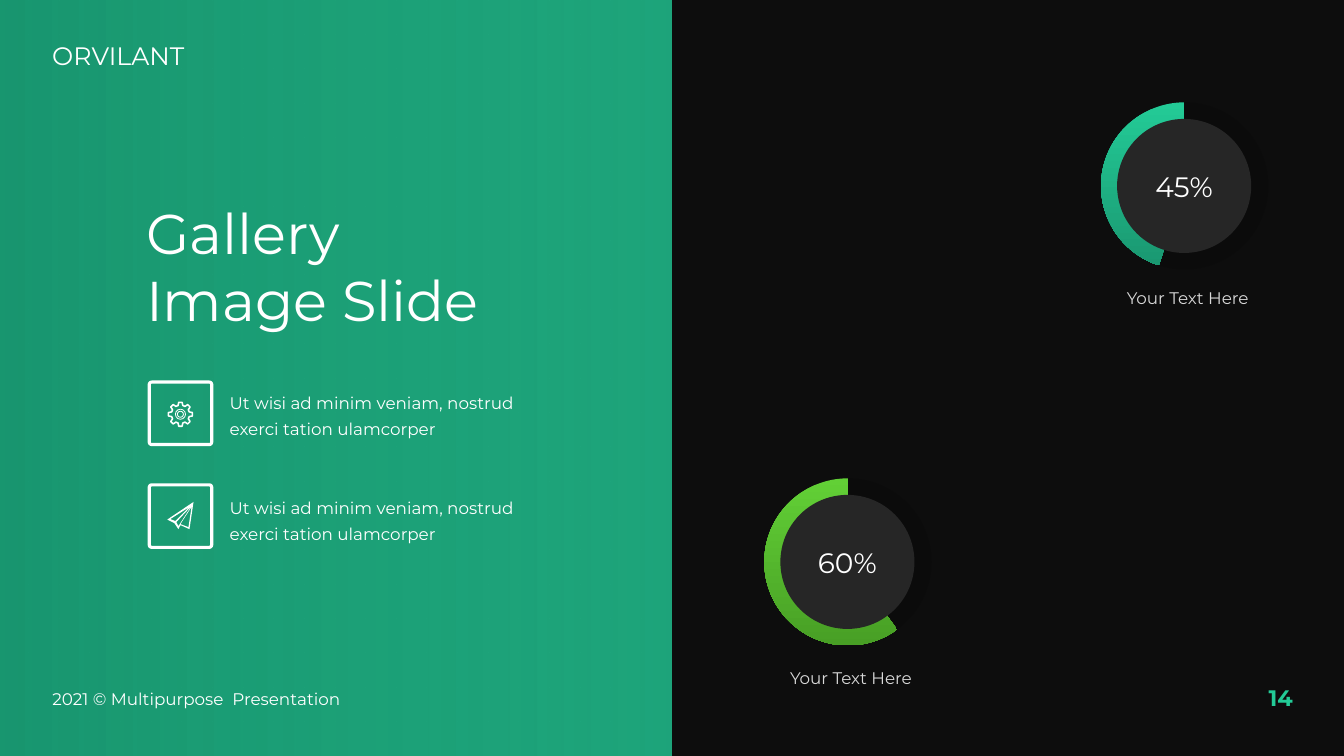
from math import cos, radians, sin

from lxml import etree
from pptx import Presentation
from pptx.chart import data as cd
from pptx.dml import color as dml
from pptx.enum import chart as ec, shapes as es, text as et
from pptx.oxml import ns
from pptx.util import Inches, Pt

RGB = dml.RGBColor
WHITE = RGB(0xFF, 0xFF, 0xFF)
BLACK = RGB(0, 0, 0)
NIGHT = RGB(0x0D, 0x0D, 0x0D)
GREY = RGB(0x26, 0x26, 0x26)
PALE = RGB(0xD9, 0xD9, 0xD9)
MINT = RGB(0x23, 0xCB, 0x97)
TEAL = RGB(0x1A, 0x98, 0x71)
LIME = RGB(0x62, 0xD0, 0x36)
MOSS = RGB(0x48, 0x9F, 0x25)

KIND = es.MSO_SHAPE
CENTER = et.PP_ALIGN.CENTER
BODY = {"line_spacing": 1.3, "space_before": Pt(10)}
PLANE = [
    [(1.92, 4.98), (1.66, 5.155), (1.73, 5.19), (1.77, 5.25),
     (1.79, 5.21), (1.88, 5.25)],
    [(1.87, 5.23), (1.79, 5.2), (1.9, 5.03)],
    [(1.75, 5.18), (1.9, 5.02), (1.77, 5.22)],
    [(1.69, 5.15), (1.88, 5.03), (1.74, 5.17)],
]


def apply(item, vals):
    for key, val in vals.items():
        setattr(item, key, val)


def fade(root, color, pct):
    for node in root.iter(ns.qn("a:srgbClr")):
        if node.get("val") == str(color):
            etree.SubElement(node, ns.qn("a:alpha"), val=str(pct * 1000))


def blend(fill, first, last, angle):
    fill.gradient()
    fill.gradient_angle = angle
    for stop, color, pos in zip(fill.gradient_stops, (first, last), (0, 1)):
        stop.color.rgb = color
        stop.position = pos


def paint(shape, fill=None, line=None, width=1):
    shape.shadow.inherit = False
    for part, color in ((shape.fill, fill), (shape.line.fill, line)):
        if color is None:
            part.background()
        else:
            part.solid()
            part.fore_color.rgb = color
    if line is not None:
        shape.line.width = Pt(width)


def write(frame, words, size, color, bold=False, para=None):
    frame.word_wrap = True
    line = frame.paragraphs[0]
    apply(line, para or {})
    run = line.add_run()
    run.text = words
    apply(run.font, {"name": "Montserrat", "size": Pt(size), "bold": bold})
    run.font.color.rgb = color


def label(slide, box, words, size, color=WHITE, bold=False, para=None,
          anchor=et.MSO_ANCHOR.TOP):
    frame = slide.shapes.add_textbox(*map(Inches, box)).text_frame
    frame.vertical_anchor = anchor
    write(frame, words, size, color, bold, para)


def draw(slide, kind, box, **look):
    shape = slide.shapes.add_shape(kind, *map(Inches, box))
    paint(shape, **look)
    return shape


def trace(slide, loops, **look):
    loops = [[(Inches(x), Inches(y)) for x, y in loop] for loop in loops]
    pen = slide.shapes.build_freeform(*loops[0][0])
    for num, loop in enumerate(loops):
        if num:
            pen.move_to(*loop[0])
        pen.add_line_segments(loop[1:], close=True)
    paint(pen.convert_to_shape(), **look)


def panel(slide):
    shape = draw(slide, KIND.RECTANGLE, (-0.01, 0.01, 6.67, 7.49))
    blend(shape.fill, TEAL, MINT, 0)
    fade(shape.element, MINT, 80)


def place(chart, box):
    area = chart.element.find(".//" + ns.qn("c:plotArea"))
    for old in area.findall(ns.qn("c:layout")):
        area.remove(old)
    layout = etree.Element(ns.qn("c:layout"))
    area.insert(0, layout)
    manual = etree.SubElement(layout, ns.qn("c:manualLayout"))
    rules = [("layoutTarget", "inner"), ("xMode", "edge"), ("yMode", "edge")]
    for name, val in rules + list(zip("xywh", box)):
        etree.SubElement(manual, ns.qn("c:" + name), val=str(val))


def dial(slide, x, y, vals, first, last, words, gap):
    data = cd.CategoryChartData()
    data.categories = ["1", "2"]
    data.add_series("Series 1", vals)
    box = map(Inches, (x - 0.97, y - 1.19, 1.94, 2.37))
    chart = slide.shapes.add_chart(ec.XL_CHART_TYPE.PIE, *box, data).chart
    apply(chart, {"has_title": False, "has_legend": False})
    plot = chart.plots[0]
    plot.vary_by_categories = True
    rest, done = (plot.series[0].points[i].format for i in (0, 1))
    for part in (rest, done):
        part.line.fill.background()
    rest.fill.solid()
    rest.fill.fore_color.rgb = BLACK
    fade(chart.element, BLACK, 13)
    blend(done.fill, first, last, 270)
    apply(chart.font, {"name": "Calibri", "size": Pt(10)})
    chart.font.color.rgb = BLACK
    place(chart, (0.07, 0.15, 0.86, 0.7))
    disc = draw(slide, KIND.OVAL, (x - 0.67, y - 0.67, 1.33, 1.33), fill=GREY)
    disc.text_frame.vertical_anchor = et.MSO_ANCHOR.MIDDLE
    write(disc.text_frame, words, 20, WHITE, para={"alignment": CENTER})
    label(slide, (x - 0.86, y + gap, 1.78, 0.34), "Your Text Here", 12, PALE,
          para={"alignment": CENTER, **BODY})


def gear(slide, x, y):
    tooth = [(-15, 0.09), (-8, 0.12), (8, 0.12), (15, 0.09)]
    rim = [(x + r * cos(radians(turn + a)), y + r * sin(radians(turn + a)))
           for turn in range(0, 360, 45) for a, r in tooth]
    trace(slide, [rim], line=WHITE, width=1.1)
    for r in (0.05, 0.03):
        draw(slide, KIND.OVAL, (x - r, y - r, 2 * r, 2 * r),
             line=WHITE, width=0.6)


def item(slide, y, top, width):
    frame = draw(slide, KIND.ROUNDED_RECTANGLE, (1.48, y, 0.62, 0.62),
                 line=WHITE, width=2.25)
    frame.adjustments[0] = 0.04
    label(slide, (2.18, top, width, 0.6),
          "Ut wisi ad minim veniam, nostrud exerci tation ulamcorper", 12,
          para=BODY)


def main():
    deck = Presentation()
    apply(deck, {"slide_width": Inches(13.33), "slide_height": Inches(7.5)})
    slide = deck.slides.add_slide(deck.slide_layouts[6])
    slide.background.fill.solid()
    slide.background.fill.fore_color.rgb = NIGHT
    panel(slide)
    dial(slide, 8.41, 5.58, (40, 60), LIME, MOSS, "60%", 0.94)
    dial(slide, 11.75, 1.85, (55, 45), MINT, TEAL, "45%", 0.9)
    item(slide, 3.79, 3.79, 3.13)
    gear(slide, 1.79, 4.11)
    item(slide, 4.81, 4.83, 3.02)
    trace(slide, PLANE, fill=WHITE)
    label(slide, (1.35, 1.92, 3.81, 1.45), "Gallery Image Slide", 40)
    label(slide, (0.42, 0.35, 1.54, 0.4), "ORVILANT", 18,
          anchor=et.MSO_ANCHOR.BOTTOM)
    label(slide, (0.42, 6.78, 4.18, 0.3),
          "2021 © Multipurpose  Presentation", 12)
    label(slide, (12.08, 6.74, 0.84, 0.37), "14", 16, MINT, True,
          {"alignment": et.PP_ALIGN.RIGHT})
    deck.save("out.pptx")


if __name__ == "__main__":
    main()
